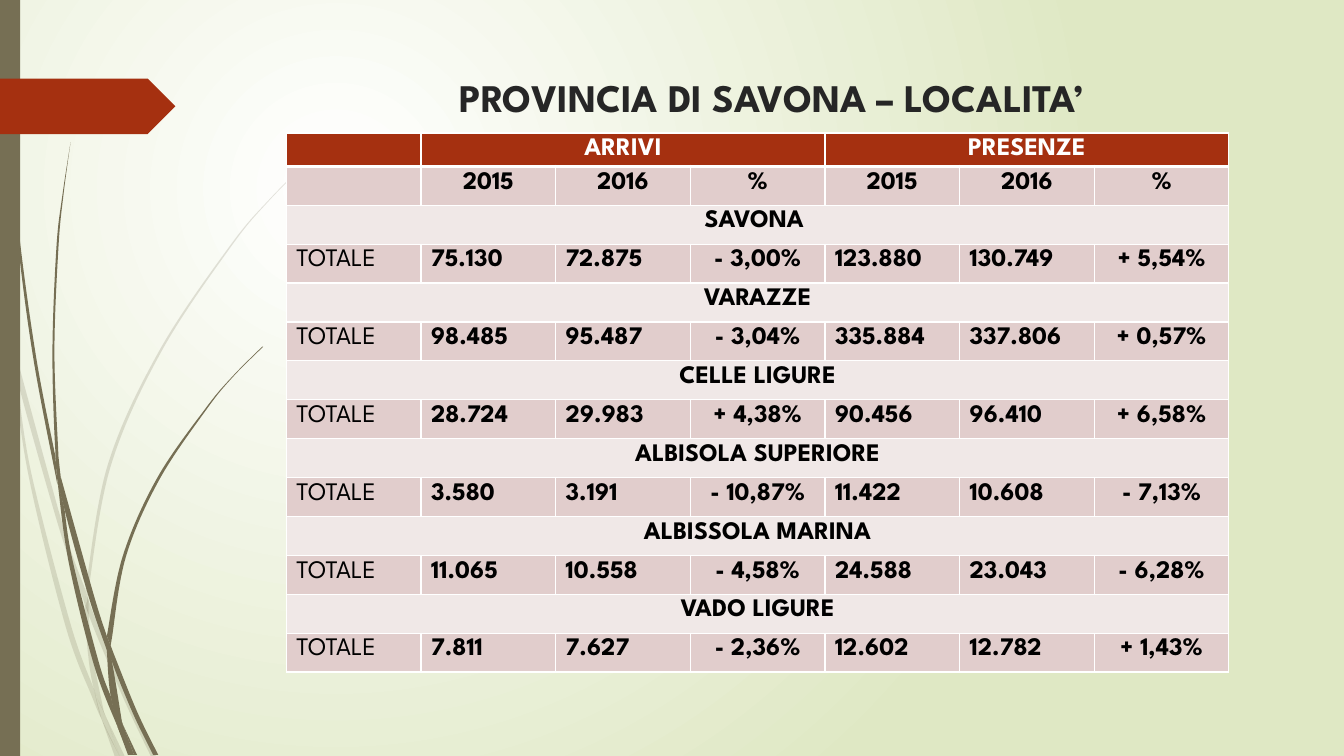
from lxml import etree
from pptx import Presentation, util as u
from pptx.dml.color import RGBColor
from pptx.enum import shapes, text
from pptx.oxml import ns

WIDTH, HEIGHT = u.Inches(13.33), u.Inches(7.5)
FONT = "League Spartan"
OLIVE = RGBColor(0x76, 0x6F, 0x54)
RUST = RGBColor(0xA5, 0x30, 0x10)
INK = RGBColor(0x26, 0x26, 0x26)
BLACK = RGBColor(0, 0, 0)
WHITE = RGBColor(0xFF, 0xFF, 0xFF)
MINT = RGBColor(0xDF, 0xE8, 0xC4)
ROSE = RGBColor(0xE1, 0xCD, 0xCC)
PALE_ROSE = RGBColor(0xF0, 0xE8, 0xE7)

# Pieces of the grass blades, in inches: one edge, then the other edge back
PALE_GRASS = [
    ([(.11, 3.5), (.09, 3.22), (0, 2.82)], [(0, 2.99), (.1, 3.44)]),
    ([(.14, 3.45), (.17, 3.76), (.58, 5.22), (.84, 5.99)], [(.85, 5.86), (.62, 5.2), (.14, 3.45)]),
    ([(.88, 5.96), (.88, 6.1), (1.23, 6.94), (1.5, 7.51)], [(1.55, 7.51), (1.27, 6.92), (.92, 6.07)]),
    ([(1.05, 7.11), (1.19, 7.51)], [(1.24, 7.51), (1.05, 7.11)]),
    ([(.11, 3.5), (.28, 4.7), (.65, 6.21), (.92, 6.93), (1.01, 7.14)],
     [(.93, 6.83), (.7, 6.19), (.31, 4.69), (.17, 3.76)]),
    ([(.84, 5.99), (.87, 6.46), (.93, 6.83), (1.05, 7.11)],
     [(1.03, 7.06), (.91, 6.46), (.88, 6.1), (.84, 5.99)]),
    ([(3.12, 1.53), (2.68, 1.97), (2.28, 2.44), (1.58, 3.48), (1.07, 4.61), (.85, 5.84)],
     [(.88, 5.96), (.88, 5.84), (1.1, 4.62), (1.6, 3.49), (2.29, 2.45), (2.68, 1.98), (3.12, 1.54)]),
    ([(1.01, 7.14), (1.14, 7.51)], [(1.19, 7.51), (1.01, 7.14)]),
    ([(.85, 5.86), (.84, 5.99)], [(.88, 6.1), (.88, 5.96)]),
    ([(.93, 6.83), (1.01, 7.14), (1.19, 7.51)], [(1.19, 7.51), (1.05, 7.11), (.96, 6.92)]),
]
DARK_GRASS = [
    ([(.03, 0), (.07, 1.1), (.17, 2.33), (.33, 3.55), (.57, 4.81)],
     [(.55, 4.53), (.36, 3.55), (.19, 2.32), (.08, 1.09), (.04, 0)]),
    ([(.6, 4.72), (.64, 5.05), (.88, 5.92), (1.06, 6.45)], [(1.06, 6.31), (.93, 5.9), (.6, 4.72)]),
    ([(1.1, 6.41), (1.11, 6.56), (1.32, 7.08), (1.52, 7.49)], [(1.57, 7.49), (1.36, 7.06), (1.13, 6.49)]),
    ([(.57, 4.77), (.68, 5.57), (.93, 6.59), (1.17, 7.22)], [(1.1, 6.91), (.98, 6.57), (.72, 5.56), (.64, 5.05)]),
    ([(.7, 1.41), (.62, 1.93), (.56, 2.45), (.52, 3.49), (.55, 4.49), (.6, 4.72)],
     [(.58, 4.53), (.54, 3.49), (.58, 2.45), (.63, 1.93), (.7, 1.41)]),
    ([(1.22, 7.19), (1.33, 7.49)], [(1.36, 7.49), (1.22, 7.19)]),
    ([(.55, 4.49), (.57, 4.77), (.64, 5.05)], [(.6, 4.72), (.55, 4.49)]),
    ([(2.6, 3.44), (2.31, 3.73), (2.04, 4.05), (1.56, 4.74), (1.22, 5.51), (1.06, 6.31)],
     [(1.1, 6.41), (1.11, 6.33), (1.25, 5.52), (1.58, 4.76), (2.05, 4.06), (2.31, 3.74), (2.61, 3.44)]),
    ([(1.17, 7.22), (1.27, 7.49)], [(1.31, 7.49), (1.17, 7.22)]),
    ([(1.06, 6.45), (1.1, 6.91), (1.22, 7.19)], [(1.21, 7.16), (1.11, 6.56), (1.06, 6.45)]),
    ([(1.06, 6.31), (1.06, 6.45)], [(1.11, 6.56), (1.1, 6.41)]),
    ([(1.1, 6.91), (1.17, 7.22), (1.3, 7.49)], [(1.33, 7.49), (1.22, 7.19), (1.16, 7.06)]),
]

YEARS = ["2015", "2016", "%"]
TOWNS = [
    ("SAVONA ", "75.130", "72.875", "- 3,00%", "123.880", "130.749", "+ 5,54%"),
    ("VARAZZE", "98.485", "95.487", "- 3,04%", "335.884", "337.806", "+ 0,57%"),
    ("CELLE LIGURE", "28.724", "29.983", "+ 4,38%", "90.456", "96.410", "+ 6,58%"),
    ("ALBISOLA SUPERIORE", "3.580", "3.191", "- 10,87%", "11.422", "10.608", "- 7,13%"),
    ("ALBISSOLA MARINA", "11.065", "10.558", "- 4,58%", "24.588", "23.043", "- 6,28%"),
    ("VADO LIGURE", "7.811", "7.627", "- 2,36%", "12.602", "12.782", "+ 1,43%"),
]


def paint(shape, color, alpha=None):
    shape.shadow.inherit = False
    shape.fill.solid()
    shape.fill.fore_color.rgb = color
    shape.line.fill.background()
    if alpha:
        tint = shape._element.spPr.find(".//" + ns.qn("a:srgbClr"))
        etree.SubElement(tint, ns.qn("a:alpha"), val=str(alpha * 1000))


def curve_controls(edge):
    """Bezier control points that lead smoothly through the edge."""
    padded = [edge[0], *edge, edge[-1]]
    for a, b, c, d in zip(padded, padded[1:], padded[2:], padded[3:]):
        yield ([q + (r - p) / 6 for p, q, r in zip(a, b, c)],
               [r - (s - q) / 6 for q, r, s in zip(b, c, d)])


def add_blade(page, edges, alpha):
    edges = [[(u.Inches(x), u.Inches(y)) for x, y in edge] for edge in edges]
    outline = edges[0] + edges[1]
    builder = page.shapes.build_freeform(*outline[0])
    builder.add_line_segments(outline[1:], close=True)
    blade = builder.convert_to_shape()
    # Bend the sides; the step between the two edges stays straight
    controls = [*curve_controls(edges[0]), None, *curve_controls(edges[1])]
    lines = blade._element.findall(".//" + ns.qn("a:lnTo"))
    for line, pair in zip(lines, controls):
        if pair:
            line.tag = ns.qn("a:cubicBezTo")
            for index, (x, y) in enumerate(pair):
                point = etree.Element(ns.qn("a:pt"), x=str(round(x - blade.left)),
                                      y=str(round(y - blade.top)))
                line.insert(index, point)
    paint(blade, OLIVE, alpha)


def add_background(page):
    page.background.fill.solid()
    holder = page._element.find(".//" + ns.qn("p:bgPr"))
    gradient = etree.fromstring(
        f'<a:gradFill {ns.nsdecls("a")} rotWithShape="1"><a:gsLst>'
        f'<a:gs pos="0"><a:srgbClr val="{WHITE}"/></a:gs>'
        f'<a:gs pos="100000"><a:srgbClr val="{MINT}"/></a:gs></a:gsLst>'
        '<a:path path="circle"><a:fillToRect l="50000" t="50000" r="100000" b="100000"/>'
        '</a:path></a:gradFill>')
    holder.replace(holder.find(ns.qn("a:solidFill")), gradient)


def add_decoration(page):
    for grass, alpha in ((PALE_GRASS, 20), (DARK_GRASS, None)):
        for edges in grass:
            add_blade(page, edges, alpha)
    # Side bar and arrow tab
    bar = page.shapes.add_shape(shapes.MSO_SHAPE.RECTANGLE, 0, 0, u.Inches(0.2), HEIGHT)
    paint(bar, OLIVE)
    tab = page.shapes.add_shape(shapes.MSO_SHAPE.PENTAGON, 0, u.Inches(0.78),
                                u.Inches(1.74), u.Inches(0.55))
    paint(tab, RUST)


def style_paragraph(para, size, color, bold=True, centred=True):
    para.font.name, para.font.size = FONT, u.Pt(size)
    para.font.bold, para.font.color.rgb = bold, color
    para.alignment = text.PP_ALIGN.CENTER if centred else text.PP_ALIGN.LEFT


def add_title(page, left, top, width, height):
    title = page.shapes.title
    title.left, title.top, title.width, title.height = left, top, width, height
    frame = title.text_frame
    frame.text = "PROVINCIA DI SAVONA – LOCALITA’"
    frame.word_wrap = True
    frame.vertical_anchor = text.MSO_ANCHOR.TOP
    frame.margin_top, frame.margin_right = u.Inches(0.05), u.Inches(0.22)
    style_paragraph(frame.paragraphs[0], 27.9, INK)


def fill_cell(cell, words, fill, color=BLACK, **style):
    cell.fill.solid()
    cell.fill.fore_color.rgb = fill
    cell.text = words
    style_paragraph(cell.text_frame.paragraphs[0], 18, color, **style)


def underline_cell(cell, points):
    border = etree.fromstring(
        f'<a:lnB {ns.nsdecls("a")} w="{u.Pt(points)}"><a:solidFill>'
        f'<a:srgbClr val="{WHITE}"/></a:solidFill></a:lnB>')
    cell._tc.get_or_add_tcPr().insert(0, border)


def add_arrivals_table(page, left, top, width, header_height, row_height):
    columns, rows = 1 + 2 * len(YEARS), 2 + 2 * len(TOWNS)
    table = page.shapes.add_table(rows, columns, left, top, width,
                                  header_height + row_height * (rows - 1)).table
    for column in table.columns:
        column.width = width // columns
    for index, row in enumerate(table.rows):
        row.height = row_height if index else header_height
    # Headings
    for column, words in enumerate(["", "ARRIVI", "", "", "PRESENZE", "", ""]):
        fill_cell(table.cell(0, column), words, RUST, WHITE)
        underline_cell(table.cell(0, column), 3)
    for first in (1, 4):
        table.cell(0, first).merge(table.cell(0, first + 2))
    for column, words in enumerate(["", *YEARS, *YEARS]):
        fill_cell(table.cell(1, column), words, ROSE)
    # A name row and a total row for each town
    for index, (town, *figures) in enumerate(TOWNS):
        row = 2 + 2 * index
        table.cell(row, 0).merge(table.cell(row, columns - 1))
        fill_cell(table.cell(row, 0), town, PALE_ROSE)
        for column, words in enumerate(["TOTALE", *figures]):
            fill_cell(table.cell(row + 1, column), words, ROSE,
                      bold=column > 0, centred=words.endswith("%"))


def main():
    deck = Presentation()
    deck.slide_width, deck.slide_height = WIDTH, HEIGHT
    page = deck.slides.add_slide(deck.slide_layouts[5])
    add_background(page)
    add_decoration(page)
    left = u.Inches(2.84)
    add_title(page, left, u.Inches(0.68), u.Inches(9.75), u.Inches(0.84))
    add_arrivals_table(page, left, u.Inches(1.32), u.Inches(9.35),
                       u.Inches(0.32), u.Cm(0.98))
    deck.save("out.pptx")


if __name__ == "__main__":
    main()
